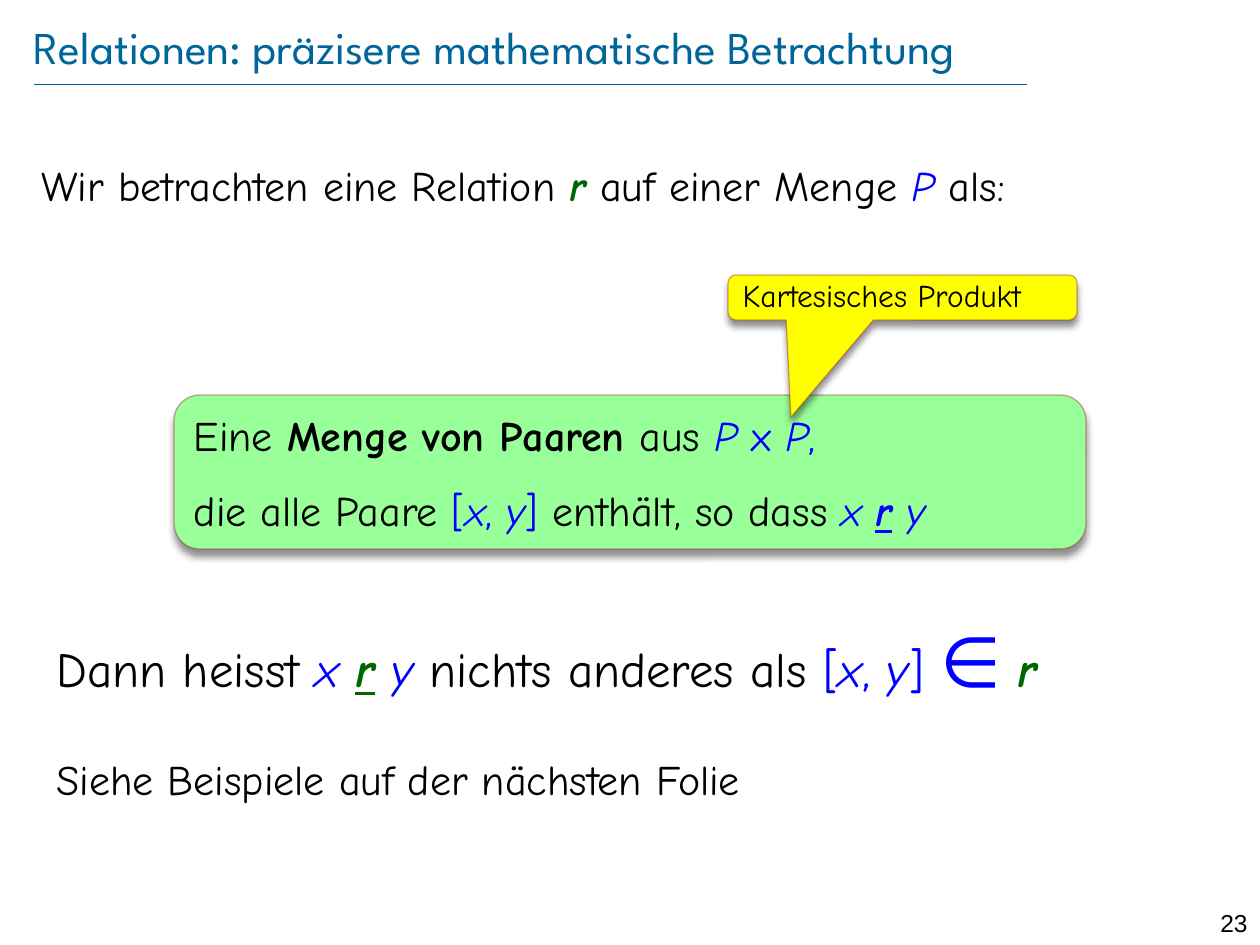
from lxml.etree import SubElement
from pptx import Presentation
from pptx.dml.color import RGBColor
from pptx.enum.shapes import MSO_CONNECTOR, MSO_SHAPE
from pptx.enum.text import MSO_ANCHOR, PP_ALIGN
from pptx.oxml.ns import qn
from pptx.util import Emu, Pt

COLORS = {
    "title": "006699", "black": "000000", "blue": "0000FF", "green": "006600",
    "mint": "99FF99", "yellow": "FFFF00", "border": "990000",
}
BODY_FONT = "Comic Neue"


def px(length):
    """Convert pixels at 126 to the inch into EMU."""
    return Emu(round(length * 914400 / 126))


def rgb(name):
    """Look up a named colour."""
    return RGBColor.from_string(COLORS[name])


def format_run(run, size, color="black", style="", font=BODY_FONT):
    """Set the font of a run; style holds the letters b, i and u."""
    run.font.name = font
    run.font.size = Pt(size)
    run.font.color.rgb = rgb(color)
    run.font.bold = "b" in style
    run.font.italic = "i" in style
    run.font.underline = "u" in style


def add_runs(paragraph, size, pieces):
    """Append (text, colour, style, size) pieces, the last three optional."""
    for text, color, style, own_size in (
        piece + ("black", "", size)[len(piece) - 1:] for piece in pieces
    ):
        run = paragraph.add_run()
        run.text = text
        format_run(run, own_size, color, style)


def place(shape, left, top, width, height):
    """Move and size a shape in pixels."""
    shape.left, shape.top = px(left), px(top)
    shape.width, shape.height = px(width), px(height)


def add_title(slide, text):
    """Fill and format the title placeholder."""
    title = slide.shapes.title
    place(title, 34, 16, 1118, 60)
    frame = title.text_frame
    frame.text = text
    frame.word_wrap = True
    frame.vertical_anchor = MSO_ANCHOR.MIDDLE
    frame.margin_left = frame.margin_right = frame.margin_top = frame.margin_bottom = 0
    paragraph = frame.paragraphs[0]
    paragraph.alignment = PP_ALIGN.LEFT
    format_run(paragraph.runs[0], 26, "title", font="League Spartan")


def add_rule(slide, left, right, top):
    """Draw the thin line below the title."""
    rule = slide.shapes.add_connector(
        MSO_CONNECTOR.STRAIGHT, px(left), px(top), px(right), px(top))
    rule.line.color.rgb = rgb("title")
    rule.line.width = Pt(0.25)
    SubElement(rule._element.spPr, qn("a:effectLst"))


def add_text(slide, left, top, width, height):
    """Add a wrapping text box and return its frame."""
    box = slide.shapes.add_textbox(px(left), px(top), px(width), px(height))
    box.text_frame.word_wrap = True
    return box.text_frame


def add_alpha(color_element, percent):
    """Give a colour element an opacity."""
    SubElement(color_element, qn("a:alpha"), val=str(percent * 1000))


def add_panel(slide, kind, left, top, width, height, fill):
    """Add a filled shape with a soft shadow and return it."""
    panel = slide.shapes.add_shape(kind, px(left), px(top), px(width), px(height))
    panel.shadow.inherit = False
    panel.fill.solid()
    panel.fill.fore_color.rgb = rgb(fill)
    panel.line.color.rgb = rgb("border")
    panel.line.width = Pt(0.75)
    properties = panel._element.spPr
    add_alpha(properties.find(".//" + qn("a:ln")).find(".//" + qn("a:srgbClr")), 34)
    shadow = SubElement(
        properties.find(qn("a:effectLst")), qn("a:outerShdw"),
        blurRad=str(Pt(4)), dist=str(Pt(4)), dir="5400000", rotWithShape="0")
    add_alpha(SubElement(shadow, qn("a:srgbClr"), val=COLORS["black"]), 43)
    panel.text_frame.word_wrap = True
    panel.text_frame.vertical_anchor = MSO_ANCHOR.MIDDLE
    panel.text_frame.paragraphs[0].alignment = PP_ALIGN.LEFT
    return panel


def add_definition(slide):
    """Add the green panel that defines a relation as a set of pairs."""
    frame = add_panel(
        slide, MSO_SHAPE.ROUNDED_RECTANGLE, 174, 395, 912, 154, "mint").text_frame
    add_runs(frame.paragraphs[0], 24, [
        ("Eine ",), ("Menge von Paaren ", "black", "b"), ("aus ",),
        ("P", "blue", "i"), (" x ", "blue"), ("P", "blue", "i"), (",", "blue")])
    second = frame.add_paragraph()
    second.alignment = PP_ALIGN.LEFT
    second.space_before = Pt(14)
    add_runs(second, 24, [
        ("die alle Paare ",), ("[", "blue"), ("x", "blue", "i"), (", ", "blue"),
        ("y", "blue", "i"), ("] ", "blue"), ("enthält, so dass ",),
        ("x ", "blue", "i"), ("r", "blue", "biu"), (" y", "blue", "i")])


def add_conclusion(slide):
    """Add the closing statement and the pointer to the examples."""
    frame = add_text(slide, 44, 641, 1114, 214)
    statement = frame.paragraphs[0]
    statement.line_spacing = 0.6
    add_runs(statement, 28, [
        ("Dann heisst ",), ("x ", "blue", "i"), ("r", "green", "biu"),
        (" y ", "blue", "i"), ("nichts anderes als ",), ("[", "blue"),
        ("x", "blue", "i"), (", ", "blue"), ("y", "blue", "i"), ("] ", "blue"),
        ("∈", "blue", "", 40), (" ", "blue"), ("r", "green", "bi")])
    pointer = frame.add_paragraph()
    pointer.space_before = Pt(32)
    add_runs(pointer, 24, [("Siehe Beispiele auf der nächsten Folie",)])


def add_callout(slide):
    """Add the yellow callout that points at the product."""
    callout = add_panel(
        slide, MSO_SHAPE.ROUNDED_RECTANGULAR_CALLOUT, 728, 275, 349, 45, "yellow")
    for index, value in enumerate((-0.32, 2.66, 0.17)):
        callout.adjustments[index] = value
    paragraph = callout.text_frame.paragraphs[0]
    paragraph.line_spacing = 0.9
    add_runs(paragraph, 18, [("Kartesisches Produkt",)])


def main():
    """Build the slide and save it."""
    presentation = Presentation()
    presentation.slide_width, presentation.slide_height = px(1260), px(945)
    slide = presentation.slides.add_slide(presentation.slide_layouts[5])
    add_rule(slide, 34, 1027, 84)
    add_title(slide, "Relationen: präzisere mathematische Betrachtung")

    number = add_text(slide, 1191, 902, 69, 30).paragraphs[0]
    number.text = "23"
    number.alignment = PP_ALIGN.RIGHT
    format_run(number.runs[0], 14, font="Arial")

    intro = add_text(slide, 29, 153, 1137, 98)
    add_runs(intro.paragraphs[0], 24, [
        ("Wir betrachten eine Relation ",), ("r", "green", "bi"),
        (" auf einer Menge ",), ("P", "blue", "i"), (" als:",)])

    add_definition(slide)
    add_conclusion(slide)
    add_callout(slide)
    presentation.save("out.pptx")


if __name__ == "__main__":
    main()
